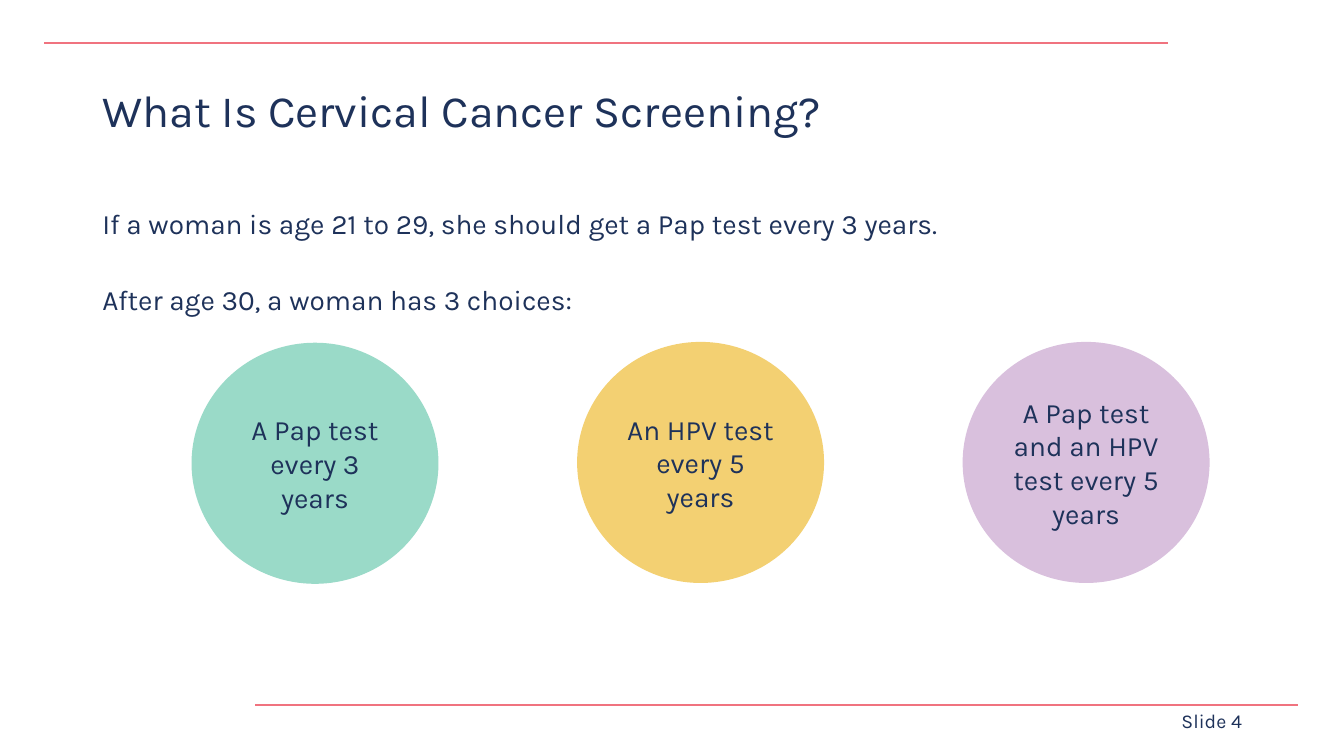
from dataclasses import dataclass

from lxml import etree
from pptx import Presentation
from pptx.dml.color import RGBColor
from pptx.enum.shapes import MSO_CONNECTOR, MSO_SHAPE
from pptx.enum.text import MSO_ANCHOR, PP_ALIGN
from pptx.oxml.ns import qn
from pptx.util import Emu, Inches, Pt

LEFT, CENTER, RIGHT = PP_ALIGN.LEFT, PP_ALIGN.CENTER, PP_ALIGN.RIGHT
TOP, MIDDLE = MSO_ANCHOR.TOP, MSO_ANCHOR.MIDDLE
OVAL = MSO_SHAPE.OVAL
STRAIGHT = MSO_CONNECTOR.STRAIGHT
TITLE_ONLY = 5

# The slide is a grid of 160 columns by 90 rows with square cells
COLUMNS, ROWS = 160, 90
CELL = Inches(1) / 12


@dataclass(frozen=True)
class Theme:
    font: str = "Karla"
    ink: str = "1E325A"
    rule: str = "F0737F"
    mint: str = "9ADAC8"
    yellow: str = "F3D072"
    lilac: str = "D9C0DD"
    title_size: int = 32
    body_size: int = 20
    footer_size: int = 14
    rule_width: float = 1.5


@dataclass(frozen=True)
class Area:
    column: float
    row: float
    columns: float
    rows: float


@dataclass(frozen=True)
class Line:
    text: str
    space_after: int = 0


@dataclass(frozen=True)
class Rule:
    start: float
    end: float
    row: float


@dataclass(frozen=True)
class Choice:
    text: str
    color: str
    row: float


THEME = Theme()

RULES = [Rule(5.3, 139, 5.12), Rule(30.4, 154.5, 83.9)]
TITLE_AREA = Area(11, 4.8, 138, 17.4)
ADVICE_AREA = Area(11, 24, 138, 57.1)
FOOTER_AREA = Area(139.2, 83.4, 9.85, 4.8)

ADVICE = [
    Line("If a woman is age 21 to 29, she should get a Pap test every 3 years.", 30),
    Line("After age 30, a woman has 3 choices:", 9),
]
CHOICES = [
    Choice("A Pap test every 3 years", THEME.mint, 40.8),
    Choice("An HPV test every 5 years", THEME.yellow, 40.7),
    Choice("A Pap test and an HPV test every 5 years", THEME.lilac, 40.7),
]
FIRST_CHOICE, CHOICE_STEP = 22.8, 45.9
CHOICE_COLUMNS, CHOICE_ROWS = 29.4, 28.7


def cells(count: float) -> Emu:
    return Emu(round(count * CELL))


def box(area: Area) -> tuple:
    return tuple(cells(n) for n in (area.column, area.row, area.columns, area.rows))


def apply(target, formats: dict) -> None:
    for name, value in formats.items():
        setattr(target, name, value)


def write(frame, lines: list[Line], size: int, align=LEFT, anchor=MIDDLE,
          line_spacing: float = 1.0) -> None:
    apply(frame, {"word_wrap": True, "vertical_anchor": anchor})
    for index, line in enumerate(lines):
        paragraph = frame.add_paragraph() if index else frame.paragraphs[0]
        paragraph.text = line.text
        apply(paragraph, {"alignment": align, "line_spacing": line_spacing,
                          "space_after": Pt(line.space_after)})
        apply(paragraph.font, {"name": THEME.font, "size": Pt(size)})
        paragraph.font.color.rgb = RGBColor.from_string(THEME.ink)


def draw_rule(slide, rule: Rule) -> None:
    row = cells(rule.row)
    connector = slide.shapes.add_connector(
        STRAIGHT, cells(rule.start), row, cells(rule.end), row)
    connector.line.color.rgb = RGBColor.from_string(THEME.rule)
    connector.line.width = Pt(THEME.rule_width)
    etree.SubElement(connector._element.spPr, qn("a:effectLst"))


def draw_choice(slide, choice: Choice, column: float) -> None:
    area = Area(column, choice.row, CHOICE_COLUMNS, CHOICE_ROWS)
    circle = slide.shapes.add_shape(OVAL, *box(area))
    circle.shadow.inherit = False
    circle.fill.solid()
    circle.fill.fore_color.rgb = RGBColor.from_string(choice.color)
    circle.line.fill.background()
    write(circle.text_frame, [Line(choice.text)], THEME.body_size, CENTER)


def main() -> None:
    deck = Presentation()
    apply(deck, {"slide_width": cells(COLUMNS), "slide_height": cells(ROWS)})
    slide = deck.slides.add_slide(deck.slide_layouts[TITLE_ONLY])

    # Rules above and below the content
    for rule in RULES:
        draw_rule(slide, rule)

    # Title
    title = slide.shapes.title
    apply(title, dict(zip(("left", "top", "width", "height"), box(TITLE_AREA))))
    write(title.text_frame, [Line("What Is Cervical Cancer Screening?")],
          THEME.title_size, line_spacing=0.9)

    # Advice by age
    advice = slide.shapes.add_textbox(*box(ADVICE_AREA))
    write(advice.text_frame, ADVICE, THEME.body_size, anchor=TOP)

    # Slide number
    footer = slide.shapes.add_textbox(*box(FOOTER_AREA))
    write(footer.text_frame, [Line("Slide 4")], THEME.footer_size, RIGHT)

    # Three choices after age 30
    for index, choice in enumerate(CHOICES):
        draw_choice(slide, choice, FIRST_CHOICE + index * CHOICE_STEP)

    deck.save("out.pptx")


if __name__ == "__main__":
    main()
